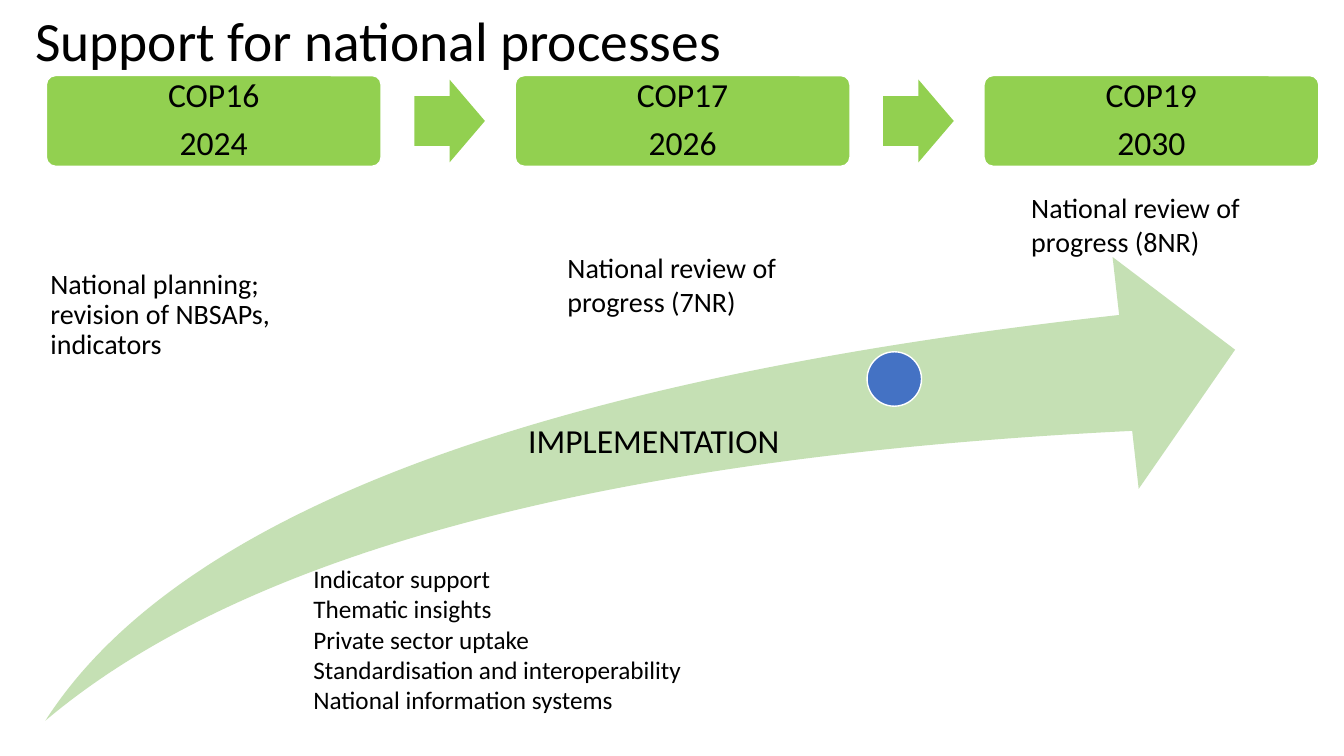
from pptx import Presentation
from pptx.dml.color import RGBColor
from pptx.enum.shapes import MSO_SHAPE as SHAPE
from pptx.enum.text import MSO_ANCHOR as ANCHOR, PP_ALIGN as ALIGN
from pptx.util import Inches, Pt

COLORS = {
    "text": "000000",
    "milestone": "92D050",
    "swoosh": "C5E0B4",
    "marker": "4472C4",
    "outline": "FFFFFF",
}
FONT = "Calibri"

MILESTONES = [("COP16", "2024"), ("COP17", "2026"), ("COP19", "2030")]
MILESTONE_LEFT, MILESTONE_PITCH = 0.46, 4.65
ARROW_OFFSET = 3.65

SUPPORT_AREAS = [
    "Indicator support",
    "Thematic insights",
    "Private sector uptake",
    "Standardisation and interoperability",
    "National information systems",
]


def color(name):
    return RGBColor.from_string(COLORS[name])


def write(shape, lines, size, frame_format=None, paragraph_format=None):
    """Fill a shape with one paragraph per line."""
    frame = shape.text_frame
    frame.word_wrap = True
    for key, value in (frame_format or {}).items():
        setattr(frame, key, value)
    for index, line in enumerate(lines):
        paragraph = frame.paragraphs[0] if index == 0 else frame.add_paragraph()
        for key, value in (paragraph_format or {}).items():
            setattr(paragraph, key, value)
        run = paragraph.add_run()
        run.text = line
        run.font.name = FONT
        run.font.size = Pt(size)
        run.font.color.rgb = color("text")


def add_text(slide, box, lines, size, frame_format=None, paragraph_format=None):
    label = slide.shapes.add_textbox(*map(Inches, box))
    write(label, lines, size, frame_format, paragraph_format)


def add_figure(slide, kind, box, fill, adjustments=(), outlined=False):
    figure = slide.shapes.add_shape(kind, *map(Inches, box))
    figure.shadow.inherit = False
    for index, value in enumerate(adjustments):
        figure.adjustments[index] = value
    figure.fill.solid()
    figure.fill.fore_color.rgb = color(fill)
    if outlined:
        figure.line.color.rgb = color("outline")
        figure.line.width = Pt(1)
    else:
        figure.line.fill.background()
    return figure


def add_milestone(slide, left, lines):
    milestone = add_figure(slide, SHAPE.ROUNDED_RECTANGLE, (left, 0.75, 3.32, 0.9),
                           "milestone", [0.1], outlined=True)
    insets = {f"margin_{side}": Inches(0.1) for side in ("left", "top", "right", "bottom")}
    write(milestone, lines, 24,
          {"vertical_anchor": ANCHOR.MIDDLE, **insets},
          {"alignment": ALIGN.CENTER, "line_spacing": 0.9, "space_after": Pt(8.4)})


def main():
    deck = Presentation()
    deck.slide_width, deck.slide_height = Inches(13.33), Inches(7.5)
    slide = deck.slides.add_slide(deck.slide_layouts[6])

    # Title
    add_text(slide, (0.25, 0.13, 11.5, 0.61), ["Support for national processes"], 39.6,
             {"vertical_anchor": ANCHOR.MIDDLE}, {"line_spacing": 0.9})

    # Implementation path with its marker
    add_figure(slide, SHAPE.SWOOSH_ARROW, (0.45, 2.55, 11.8, 4.6), "swoosh", [0.25, 0.25])
    add_figure(slide, SHAPE.OVAL, (8.6, 3.49, 0.54, 0.54), "marker", outlined=True)

    # Milestones joined by block arrows
    for index, lines in enumerate(MILESTONES):
        left = MILESTONE_LEFT + index * MILESTONE_PITCH
        add_milestone(slide, left, lines)
        if index < len(MILESTONES) - 1:
            add_figure(slide, SHAPE.RIGHT_ARROW, (left + ARROW_OFFSET, 0.79, 0.7, 0.82),
                       "milestone", [0.6, 0.5])

    # Steps along the path
    add_text(slide, (0.5, 2.68, 3.04, 1.17),
             ["National planning; revision of NBSAPs, indicators"], 20,
             {"margin_left": 0, "margin_top": 0, "margin_right": Inches(0.29),
              "margin_bottom": 0},
             {"line_spacing": 0.9})
    for left, top, report in [(5.53, 2.44, "7NR"), (10.13, 1.84, "8NR")]:
        add_text(slide, (left, top, 2.64, 0.77),
                 [f"National review of progress ({report})"], 20)
    add_text(slide, (5.14, 4.12, 3.24, 0.5), ["IMPLEMENTATION"], 24)

    # Areas of support
    add_text(slide, (3.01, 5.54, 9.04, 1.62), SUPPORT_AREAS, 18)

    deck.save("out.pptx")


if __name__ == "__main__":
    main()
